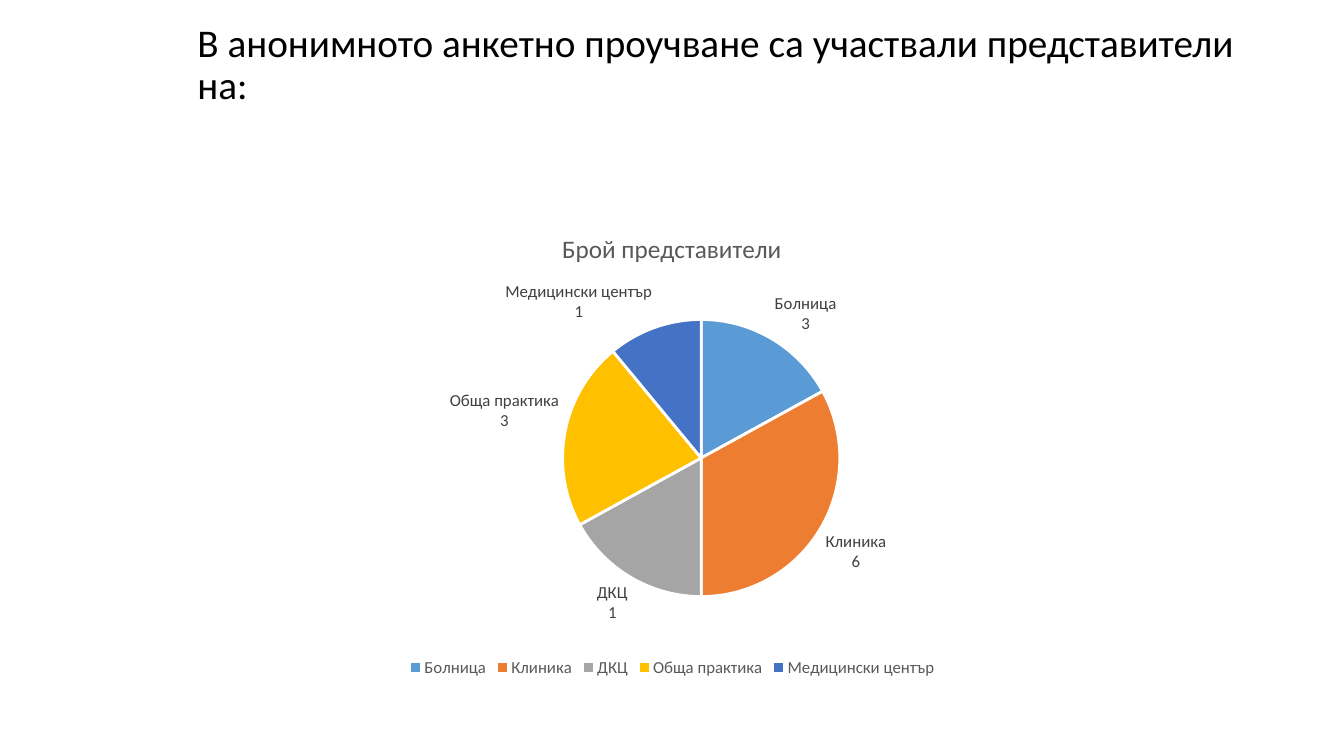
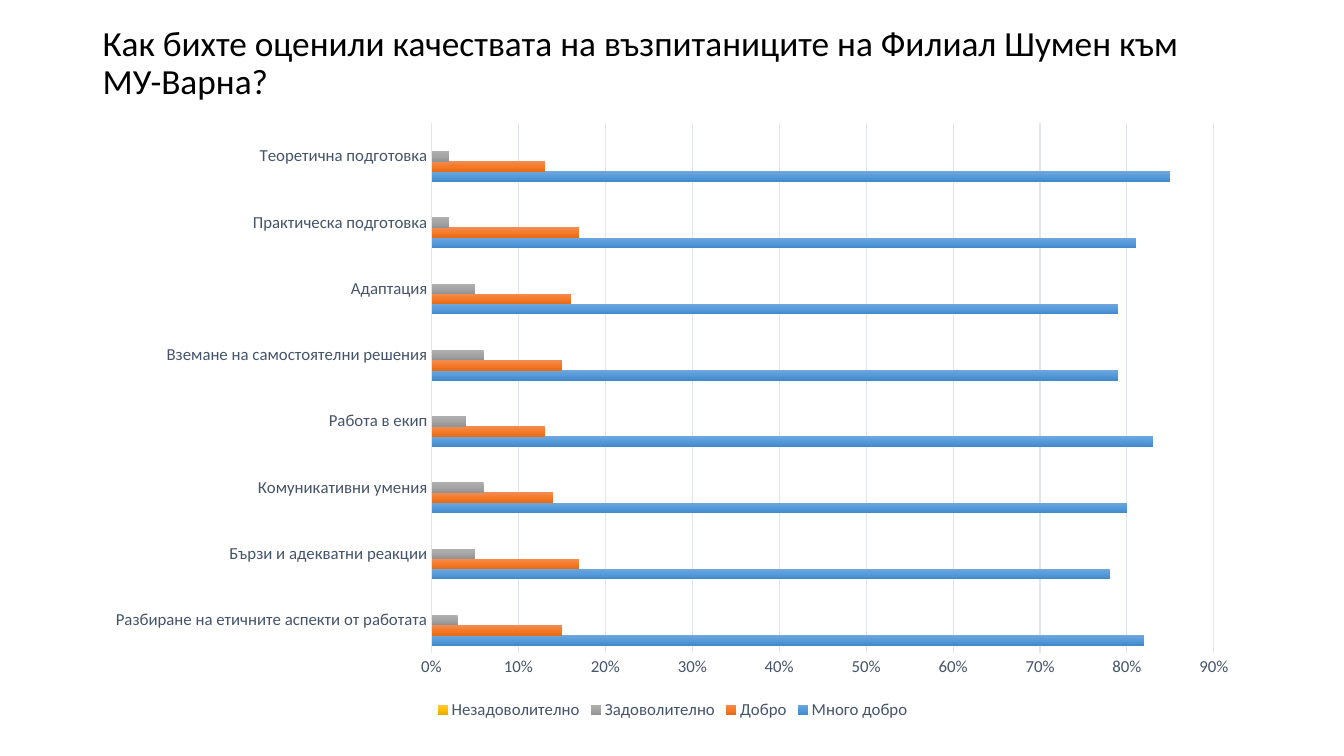
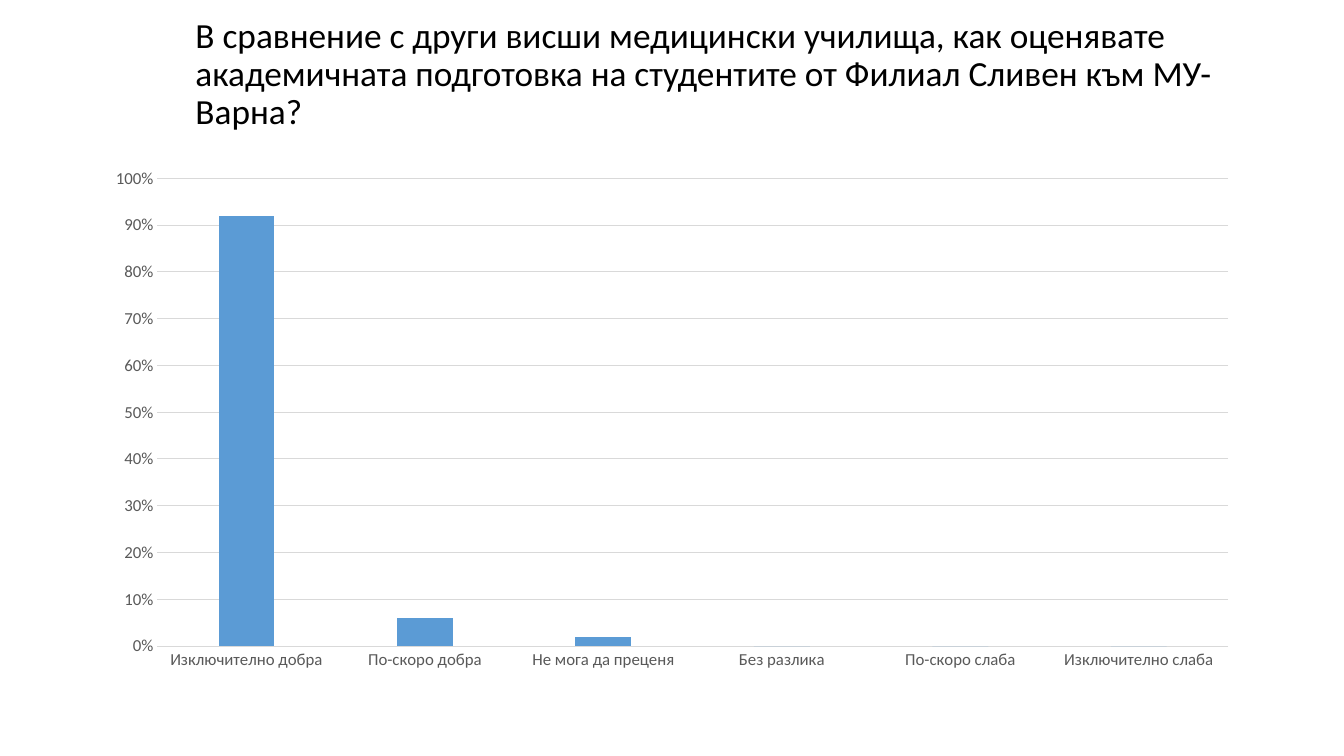
from lxml import etree
from copy import deepcopy
from pptx import Presentation
from pptx.chart.data import CategoryChartData
from pptx.dml.color import RGBColor
from pptx.enum.chart import (
    XL_CHART_TYPE, XL_LABEL_POSITION, XL_LEGEND_POSITION, XL_TICK_MARK)
from pptx.enum.text import MSO_ANCHOR
from pptx.oxml.ns import qn
from pptx.util import Pt

PX = 9144  # 100 px to the inch
FONT = "Calibri"
PIE, BAR, COLUMN = (
    XL_CHART_TYPE.PIE, XL_CHART_TYPE.BAR_CLUSTERED,
    XL_CHART_TYPE.COLUMN_CLUSTERED)
OUTSIDE = XL_LABEL_POSITION.OUTSIDE_END
BOTTOM = XL_LEGEND_POSITION.BOTTOM
NO_TICK = XL_TICK_MARK.NONE
MIDDLE = MSO_ANCHOR.MIDDLE


def rgb(code):
    return RGBColor.from_string(code)


BLACK, WHITE = rgb("000000"), rgb("FFFFFF")
GRAY, DARK, SLATE = rgb("595959"), rgb("404040"), rgb("44546A")
RULE, PALE = rgb("D9D9D9"), rgb("E0E5EB")
BLUE = rgb("5B9BD5")
SLICES = [BLUE, rgb("ED7D31"), rgb("A5A5A5"), rgb("FFC000"), rgb("4472C4")]
FADES = [[rgb(code) for code in row.split()] for row in (
    "71A6DB 559BDB 448ACA",
    "F18C57 F67B28 E56C19",
    "AFAFAF A5A5A5 939393",
    "FFC64B FFC000 E3AB00",
    "6183CB 3E70CA 3062BB")]

MEMBERS = [("Болница", 17, 3), ("Клиника", 33, 6), ("ДКЦ", 17, 1),
           ("Обща практика", 22, 3), ("Медицински център", 11, 1)]
SKILLS = [
    ("Разбиране на етичните аспекти от работата", 0.82, 0.15, 0.03),
    ("Бързи и адекватни реакции", 0.78, 0.17, 0.05),
    ("Комуникативни умения", 0.8, 0.14, 0.06),
    ("Работа в екип", 0.83, 0.13, 0.04),
    ("Вземане на самостоятелни решения", 0.79, 0.15, 0.06),
    ("Адаптация", 0.79, 0.16, 0.05),
    ("Практическа подготовка", 0.81, 0.17, 0.02),
    ("Теоретична подготовка", 0.85, 0.13, 0.02)]
GRADES = ["Много добро", "Добро", "Задоволително", "Незадоволително", ""]
VIEWS = [("Изключително добра", 0.92), ("По-скоро добра", 0.06),
         ("Не мога да преценя", 0.02), ("Без разлика", 0),
         ("По-скоро слаба", 0), ("Изключително слаба", 0)]


def style(font, size, color):
    font.name, font.size, font.bold = FONT, Pt(size), False
    font.color.rgb = color


def add_title(slide, box, text, size):
    frame = slide.shapes.add_textbox(*(n * PX for n in box)).text_frame
    frame.word_wrap = True
    frame.vertical_anchor = MIDDLE
    para = frame.paragraphs[0]
    para.line_spacing = 0.9
    run = para.add_run()
    run.text = text
    style(run.font, size, BLACK)


def add_chart(slide, kind, box, cats, series, form="General"):
    data = CategoryChartData(number_format=form)
    data.categories = cats
    for name, vals in series:
        data.add_series(name, vals)
    frame = slide.shapes.add_chart(kind, *(n * PX for n in box), data)
    chart = frame.chart
    style(chart.font, 10, BLACK)
    chart.has_title = chart.has_legend = False
    return chart


def place(part, index, box, spot):
    """Pin a chart part at spot, given on the slide, inside the chart box."""
    layout = part.find(qn("c:layout"))
    if layout is None:
        layout = etree.Element(qn("c:layout"))
        part.insert(index, layout)
    manual = etree.SubElement(layout, qn("c:manualLayout"))
    left, top, wide, high = box
    rules = [("xMode", "edge"), ("yMode", "edge"),
             ("x", (spot[0] - left) / wide), ("y", (spot[1] - top) / high)]
    if len(spot) == 4:
        rules.insert(0, ("layoutTarget", "inner"))
        rules += [("w", spot[2] / wide), ("h", spot[3] / high)]
    for tag, val in rules:
        etree.SubElement(manual, qn("c:" + tag)).set("val", str(val))


def place_plot(chart, box, spot):
    place(chart._chartSpace.chart.plotArea, 0, box, spot)


def add_legend(chart, color):
    chart.has_legend = True
    legend = chart.legend
    legend.position = BOTTOM
    legend.include_in_layout = False
    style(legend.font, 12, color)
    return legend


def set_axes(chart, color, line, top):
    for axis in (chart.category_axis, chart.value_axis):
        axis.major_tick_mark = axis.minor_tick_mark = NO_TICK
        style(axis.tick_labels.font, 12, color)
    value = chart.value_axis
    value.minimum_scale, value.maximum_scale = 0, top
    value.major_unit = 0.1
    value.tick_labels.number_format = "0%"
    value.tick_labels.number_format_is_linked = False
    value.format.line.fill.background()
    value.has_major_gridlines = True
    chart.category_axis.has_major_gridlines = False
    for item in (chart.category_axis, value.major_gridlines):
        item.format.line.color.rgb = line
        item.format.line.width = Pt(0.75)


def fade(series, colors):
    fill = series.format.fill
    fill.gradient()
    fill.gradient_angle = 270
    stops = series._element.find(".//" + qn("a:gsLst"))
    stops.insert(1, deepcopy(stops[0]))
    for stop, pos, color in zip(fill.gradient_stops, (0, 0.5, 1), colors):
        stop.position, stop.color.rgb = pos, color


def add_label(point, lines):
    label = point.data_label
    frame = label.text_frame
    for i, line in enumerate(lines):
        para = frame.add_paragraph() if i else frame.paragraphs[0]
        run = para.add_run()
        run.text = line
        style(run.font, 12, DARK)
    label.position = OUTSIDE


def members_slide(slide):
    add_title(slide, (186, 21, 1056, 88), "В анонимното анкетно проучване "
              "са участвали представители на:", 28)
    box = (92, 200, 1150, 476)
    cats, shares, counts = zip(*MEMBERS)
    name = "Брой представители"
    chart = add_chart(slide, PIE, box, cats, [(name, shares)])
    place_plot(chart, box, (558, 317, 275, 275))
    add_legend(chart, GRAY)
    chart.has_title = True
    run = chart.chart_title.text_frame.paragraphs[0].add_run()
    run.text = name
    style(run.font, 18, GRAY)
    place(chart.chart_title._element, 1, box, (553, 225))
    chart.plots[0].vary_by_categories = True
    points = chart.plots[0].series[0].points
    for i, color in enumerate(SLICES):
        look = points[i].format
        look.fill.solid()
        look.fill.fore_color.rgb = color
        look.line.color.rgb = WHITE
        look.line.width = Pt(2)
        add_label(points[i], (cats[i], str(counts[i])))


def skills_slide(slide):
    add_title(slide, (92, 17, 1150, 93), "Как бихте оценили качествата на "
              "възпитаниците на Филиал Шумен към МУ-Варна?", 25.2)
    box = (92, 110, 1150, 608)
    cats, *marks = zip(*SKILLS)
    blank = [None] * len(cats)
    marks += [blank] * (len(GRADES) - len(marks))
    chart = add_chart(slide, BAR, box, cats, zip(GRADES, marks), "0%")
    place_plot(chart, box, (428, 122, 776, 526))
    set_axes(chart, SLATE, PALE, 0.9)
    plot = chart.plots[0]
    plot.vary_by_categories = False
    plot.gap_width = 150
    for series, colors in zip(plot.series, FADES):
        fade(series, colors)
    # The unnamed grade takes bar space but no legend entry.
    legend = add_legend(chart, SLATE)._element
    entry = etree.Element(qn("c:legendEntry"))
    etree.SubElement(entry, qn("c:idx")).set("val", "0")
    etree.SubElement(entry, qn("c:delete")).set("val", "1")
    legend.insert(1, entry)


def views_slide(slide):
    add_title(slide, (184, 15, 1058, 119), "В сравнение с други висши "
              "медицински училища, как оценявате академичната подготовка на "
              "студентите от Филиал Сливен към МУ-Варна?", 25.2)
    box = (92, 157, 1150, 519)
    cats, shares = zip(*VIEWS)
    chart = add_chart(slide, COLUMN, box, cats, [("Series 1", shares)], "0%")
    place_plot(chart, box, (156, 177, 1062, 464))
    set_axes(chart, GRAY, RULE, 1)
    plot = chart.plots[0]
    plot.vary_by_categories = False
    plot.gap_width, plot.overlap = 219, -27
    fill = plot.series[0].format.fill
    fill.solid()
    fill.fore_color.rgb = BLUE


def main():
    deck = Presentation()
    deck.slide_width, deck.slide_height = 1333 * PX, 750 * PX
    for build in (members_slide, skills_slide, views_slide):
        build(deck.slides.add_slide(deck.slide_layouts[6]))
    deck.save("out.pptx")


if __name__ == "__main__":
    main()
